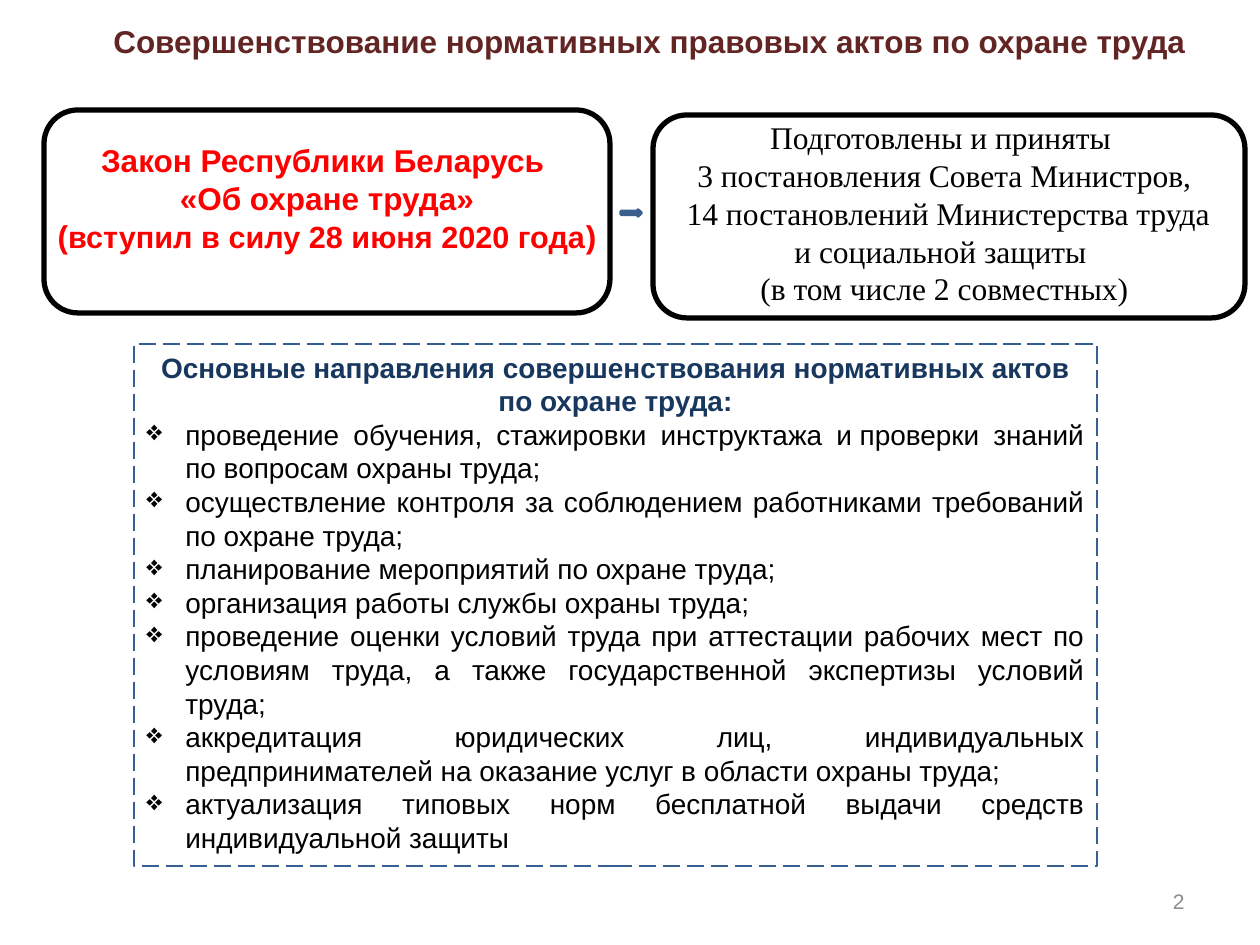
from dataclasses import dataclass

from lxml import etree
from pptx import Presentation
from pptx.dml.color import RGBColor
from pptx.enum.dml import MSO_LINE
from pptx.enum.shapes import MSO_SHAPE
from pptx.enum.text import MSO_ANCHOR, PP_ALIGN
from pptx.oxml.ns import qn
from pptx.util import Emu, Pt

PX_PER_INCH = 126
CENTER, RIGHT, JUSTIFY = PP_ALIGN.CENTER, PP_ALIGN.RIGHT, PP_ALIGN.JUSTIFY
TOP, MIDDLE = MSO_ANCHOR.TOP, MSO_ANCHOR.MIDDLE
ROUNDED = MSO_SHAPE.FLOWCHART_ALTERNATE_PROCESS
RECT, ARROW = MSO_SHAPE.RECTANGLE, MSO_SHAPE.RIGHT_ARROW
LONG_DASH = MSO_LINE.LONG_DASH


@dataclass(frozen=True)
class Theme:
    sans: str = "Arial"
    serif: str = "Times New Roman"
    title: str = "632523"
    law: str = "FF0000"
    heading: str = "17375E"
    text: str = "000000"
    muted: str = "8C8C8C"
    frame: str = "376092"
    arrow_fill: str = "4F81BD"
    arrow_line: str = "3A5F8C"
    large: float = 18
    law_date: float = 17.5
    body: float = 16
    small: float = 12


THEME = Theme()

DIRECTIONS = [
    "проведение обучения, стажировки инструктажа и\u00a0проверки знаний по вопросам охраны труда;",
    "осуществление контроля за соблюдением работниками требований по охране труда;",
    "планирование мероприятий по охране труда; ",
    "организация работы службы охраны труда;",
    "проведение оценки условий труда при аттестации рабочих мест по условиям труда, "
    "а также государственной экспертизы условий труда;",
    "аккредитация юридических лиц, индивидуальных предпринимателей "
    "на оказание услуг в области охраны труда;",
    "актуализация типовых норм бесплатной выдачи средств индивидуальной защиты ",
]


def px(value):
    return Emu(round(value * 914400 / PX_PER_INCH))


def style_run(r, size, color, bold=False, font=THEME.sans):
    r.font.name = font
    r.font.size = Pt(size)
    r.font.bold = bold
    r.font.color.rgb = RGBColor.from_string(color)


def style_paragraph(p, size, color, bold=False, font=THEME.sans, align=CENTER):
    p.alignment = align
    for r in p.runs:
        style_run(r, size, color, bold, font)


def add_bullet(p, char="❖", indent=39):
    pPr = p._p.get_or_add_pPr()
    pPr.set("marL", str(px(indent)))
    pPr.set("indent", str(-px(indent)))
    etree.SubElement(pPr, qn("a:buChar")).set("char", char)


def add_text(slide, box, lines, anchor=TOP, **style):
    tf = slide.shapes.add_textbox(*map(px, box)).text_frame
    tf.word_wrap = True
    tf.vertical_anchor = anchor
    tf.text = lines[0]
    for line in lines[1:]:
        tf.add_paragraph().text = line
    for p in tf.paragraphs:
        style_paragraph(p, **style)
    return tf


def add_panel(slide, kind, box, line, width, fill=None, dash=None):
    sp = slide.shapes.add_shape(kind, *map(px, box))
    sp.shadow.inherit = False
    if fill:
        sp.fill.solid()
        sp.fill.fore_color.rgb = RGBColor.from_string(fill)
    else:
        sp.fill.background()
    sp.line.color.rgb = RGBColor.from_string(line)
    sp.line.width = Pt(width)
    if dash:
        sp.line.dash_style = dash
    return sp


def add_directions(slide, box):
    sp = add_panel(slide, RECT, box, THEME.frame, 1.25, dash=LONG_DASH)
    tf = sp.text_frame
    tf.word_wrap = True
    tf.vertical_anchor = TOP
    tf.text = "Основные направления совершенствования нормативных актов по охране труда:"
    style_paragraph(tf.paragraphs[0], THEME.body, THEME.heading, bold=True)
    for direction in DIRECTIONS:
        p = tf.add_paragraph()
        p.text = direction
        style_paragraph(p, THEME.body, THEME.text, align=JUSTIFY)
        add_bullet(p)


def add_law(slide, box):
    tf = add_text(slide, box, ["Закон Республики Беларусь ", "«Об охране труда»", "("],
                  size=THEME.large, color=THEME.law, bold=True)
    p = tf.paragraphs[-1]
    for text, size in (("вступил в силу 28 июня 2020 года", THEME.law_date),
                       (")", THEME.large)):
        r = p.add_run()
        r.text = text
        style_run(r, size, THEME.law, bold=True)


def main():
    prs = Presentation()
    prs.slide_width, prs.slide_height = px(1260), px(945)
    slide = prs.slides.add_slide(prs.slide_layouts[6])

    add_text(slide, (903, 876, 294, 50), ["2"], anchor=MIDDLE,
             size=THEME.small, color=THEME.muted, align=RIGHT)
    add_text(slide, (89, 16, 1121, 50),
             ["Совершенствование нормативных правовых актов по охране труда"],
             size=THEME.large, color=THEME.title, bold=True)
    for box in ((44, 110, 566, 203), (653, 115, 592, 203)):
        add_panel(slide, ROUNDED, box, THEME.text, 3)
    add_directions(slide, (134, 344, 963, 522))
    add_panel(slide, ARROW, (621, 210, 20, 6), THEME.arrow_line, 2, fill=THEME.arrow_fill)
    add_text(slide, (656, 112, 577, 204),
             ["Подготовлены и\u00a0приняты ",
              "3 постановления Совета Министров,\n"
              " 14 постановлений Министерства труда и\u00a0социальной защиты ",
              "(в том числе 2 совместных)"],
             size=THEME.large, color=THEME.text, font=THEME.serif)
    add_law(slide, (44, 135, 566, 127))

    prs.save("out.pptx")


if __name__ == "__main__":
    main()
